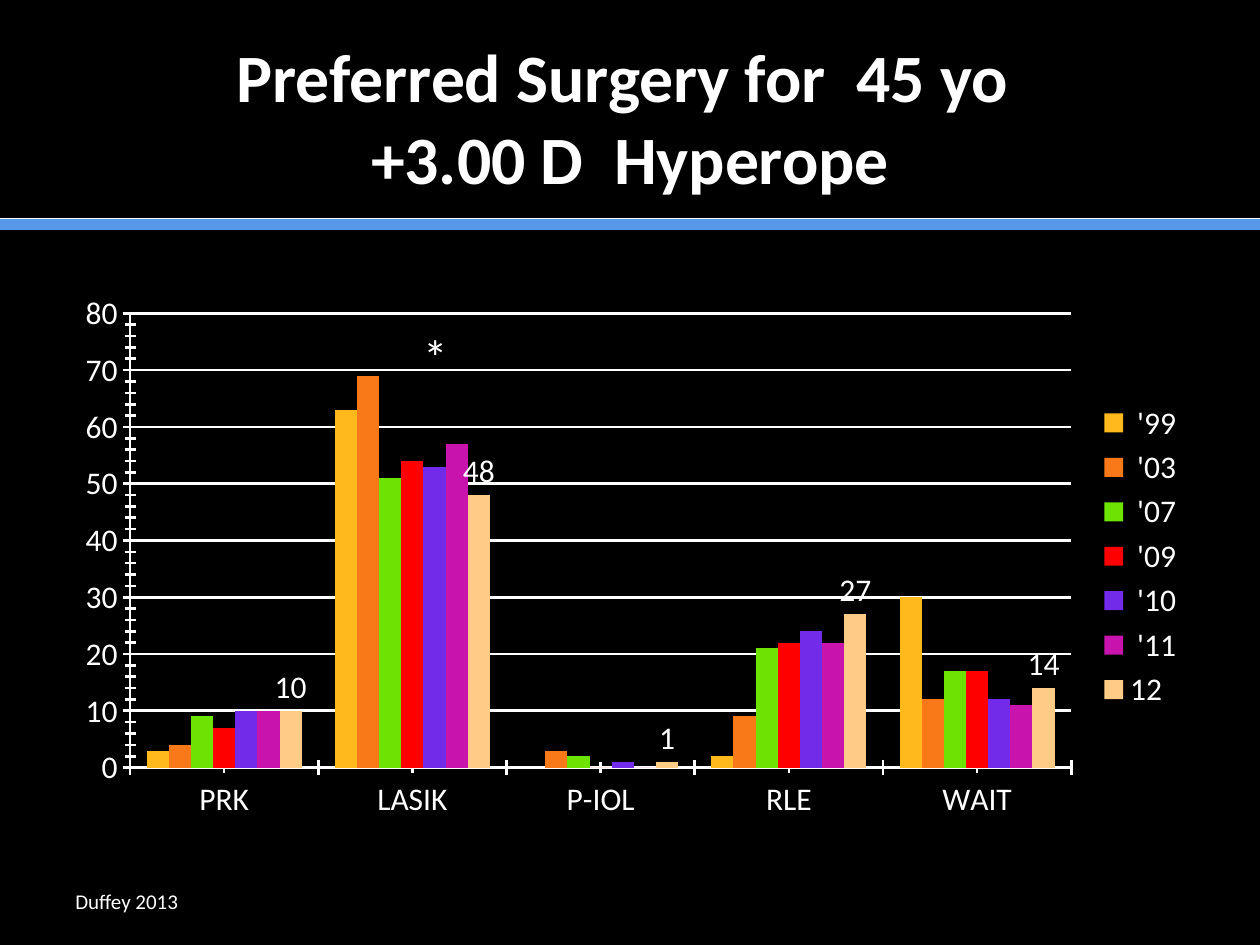
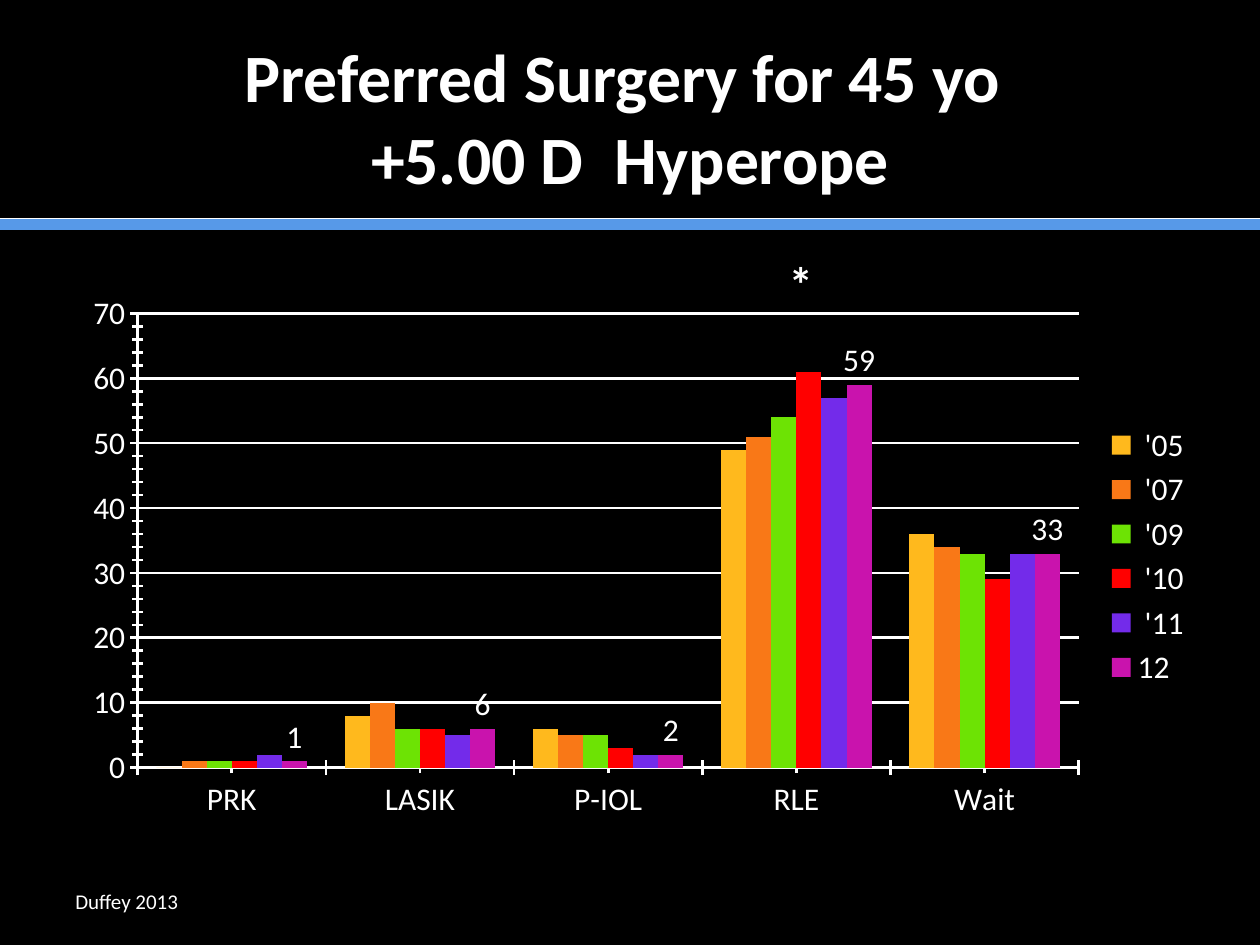
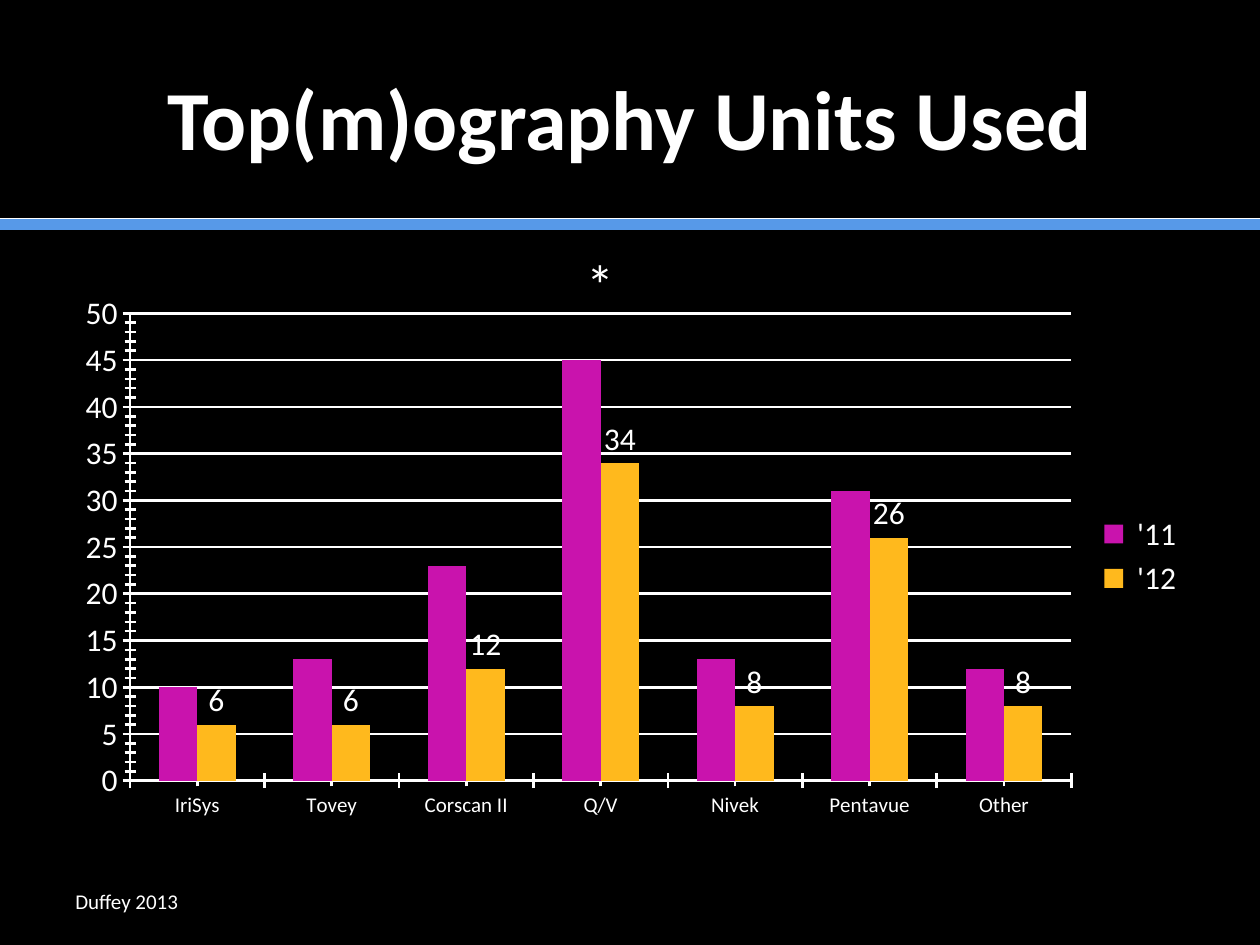
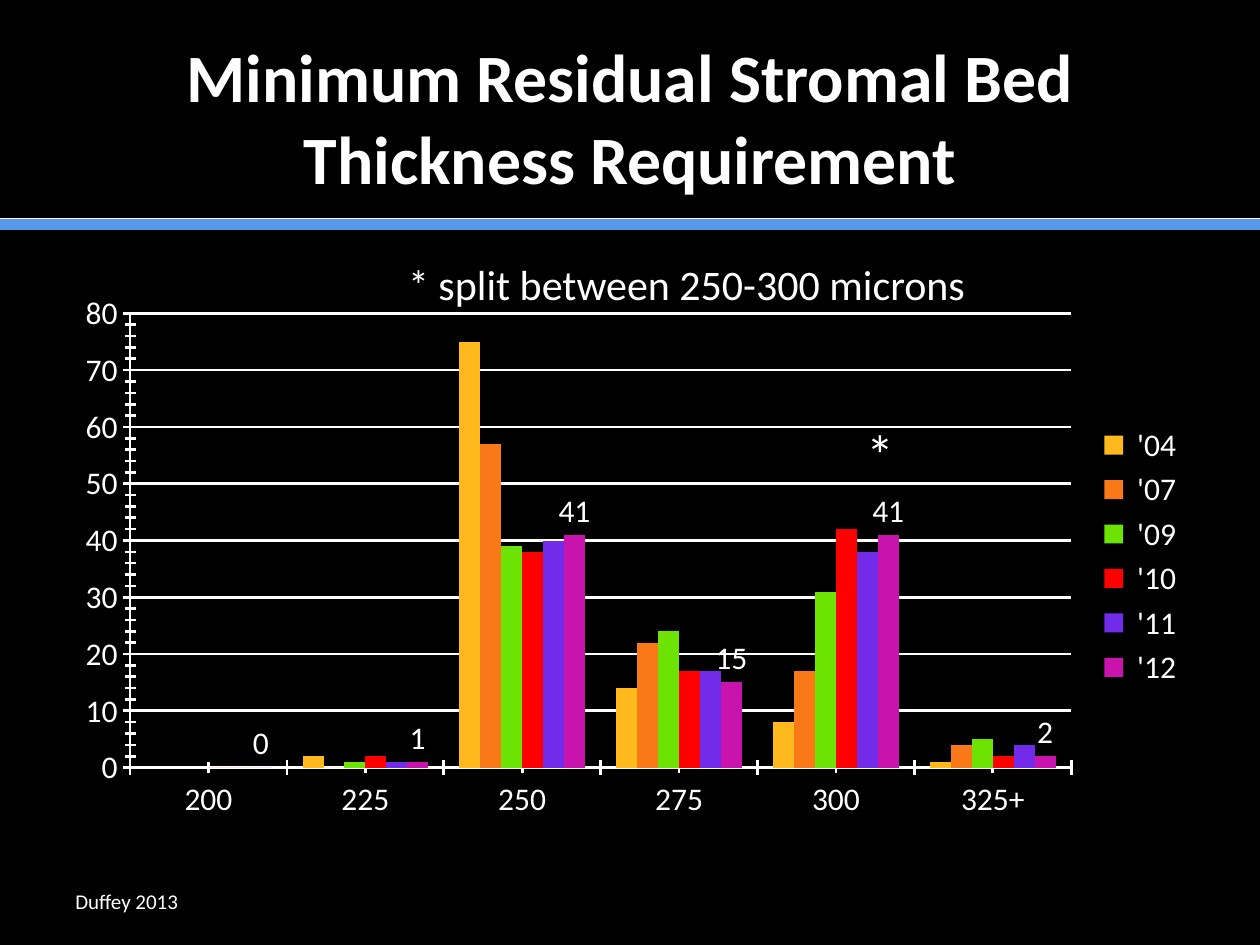
"""Builds four survey slides on refractive surgery, each with a clustered column chart."""
from lxml import etree
from pptx import Presentation
from pptx.chart.data import CategoryChartData
from pptx.dml.color import RGBColor
from pptx.enum.chart import XL_CHART_TYPE, XL_LABEL_POSITION, XL_LEGEND_POSITION, XL_TICK_MARK
from pptx.enum.shapes import MSO_CONNECTOR
from pptx.enum.text import MSO_ANCHOR, MSO_AUTO_SIZE, PP_ALIGN
from pptx.oxml.ns import qn
from pptx.util import Emu, Pt

CLUSTERED = XL_CHART_TYPE.COLUMN_CLUSTERED
OUTSIDE_END = XL_LABEL_POSITION.OUTSIDE_END
LEGEND_RIGHT = XL_LEGEND_POSITION.RIGHT
TICK_CROSS = XL_TICK_MARK.CROSS
STRAIGHT = MSO_CONNECTOR.STRAIGHT
MIDDLE = MSO_ANCHOR.MIDDLE
NO_AUTOFIT = MSO_AUTO_SIZE.NONE
CENTER = PP_ALIGN.CENTER

EMU_PER_PX = 9144
SLIDE_W, SLIDE_H = 1000, 750
FONT = "Calibri"
TITLE_SIZE = 38.7
COLORS = {
    "background": "000000",
    "text": "FFFFFF",
    "band": "5799E8",
    "amber": "FFB91D",
    "orange": "F97817",
    "green": "6DE304",
    "red": "FF0000",
    "violet": "732BEA",
    "magenta": "C913AD",
    "peach": "FFCC87",
}
YEAR_COLORS = ["amber", "orange", "green", "red", "violet", "magenta", "peach"]

SURVEYS = [
    {
        "title": ["Preferred Surgery for  45 yo ", "+3.00 D  Hyperope"],
        "categories": ["PRK", "LASIK", "P-IOL", "RLE", "WAIT"],
        "years": {
            " '99": [3, 63, None, 2, 30],
            " '03": [4, 69, 3, 9, 12],
            " '07": [9, 51, 2, 21, 17],
            " '09": [7, 54, 0, 22, 17],
            " '10": [10, 53, 1, 24, 12],
            " '11": [10, 57, 0, 22, 11],
            "12": [10, 48, 1, 27, 14],
        },
        "top": 80,
        "marks": [("*", (326, 254, 41, 57), 28, False)],
    },
    {
        "title": ["Preferred Surgery for 45 yo ", "+5.00 D  Hyperope"],
        "categories": ["PRK", "LASIK", "P-IOL", "RLE", "Wait"],
        "years": {
            " '05": [0, 8, 6, 49, 36],
            " '07": [1, 10, 5, 51, 34],
            " '09": [1, 6, 5, 54, 33],
            " '10": [1, 6, 3, 61, 29],
            " '11": [2, 5, 2, 57, 33],
            "12": [1, 6, 2, 59, 33],
        },
        "chart_left": 56,
        "top": 70,
        "marks": [("*", (616, 196, 41, 57), 28, True)],
    },
    {
        "title": ["Top(m)ography Units Used"],
        "title_size": 48,
        "categories": ["IriSys", "Tovey", "Corscan II", "Q/V", "Nivek", "Pentavue", "Other"],
        "years": {
            " '11": [10, 13, 23, 45, 13, 31, 12],
            " '12": [6, 6, 12, 34, 8, 26, 8],
        },
        "colors": ["magenta", "amber"],
        "category_size": 12,
        "top": 50,
        "step": 5,
        "marks": [("*", (456, 193, 44, 64), 32, False)],
    },
    {
        "title": ["Minimum Residual Stromal Bed Thickness Requirement"],
        "categories": ["200", "225", "250", "275", "300", "325+"],
        "years": {
            " '04": [None, 2, 75, 14, 8, 1],
            " '07": [None, 0, 57, 22, 17, 4],
            " '09": [None, 1, 39, 24, 31, 5],
            " '10": [0, 2, 38, 17, 42, 2],
            " '11": [0, 1, 40, 17, 38, 4],
            " '12": [0, 1, 41, 15, 41, 2],
        },
        "top": 80,
        "marks": [
            ("*", (678, 328, 44, 64), 32, False),
            ("* split between 250-300 microns", (314, 200, 471, 50), 24, False),
        ],
    },
]


def px(*lengths):
    """Turn px lengths into EMU."""
    return [Emu(length * EMU_PER_PX) for length in lengths]


def rgb(name):
    """Look up a named colour."""
    return RGBColor.from_string(COLORS[name])


def style_font(font, size, bold=False):
    """Apply the shared face and text colour."""
    font.name = FONT
    font.size = Pt(size)
    font.bold = bold
    font.color.rgb = rgb("text")


def add_run(paragraph, text, size, bold=False):
    """Append one formatted run."""
    run = paragraph.add_run()
    run.text = text
    style_font(run.font, size, bold)


def add_band(slide):
    """Place the two rules below the title on the layout that all slides share."""
    layout_tree = slide.slide_layout.shapes.element
    rules = [(178, "band", 7), (173, "text", 0.5)]
    for number, (y, color, width) in enumerate(rules, start=101):
        rule = slide.shapes.add_connector(STRAIGHT, *px(0, y, SLIDE_W, y))
        rule.line.color.rgb = rgb(color)
        rule.line.width = Pt(width)
        etree.SubElement(rule.element.spPr, qn("a:effectLst"))
        rule.element.nvCxnSpPr.cNvPr.set("id", str(number))
        layout_tree.append(rule.element)


def add_title(slide, lines, size):
    """Fill the title placeholder, one run per line."""
    title = slide.shapes.title
    title.left, title.top, title.width, title.height = px(50, 30, 900, 125)
    frame = title.text_frame
    frame.auto_size = NO_AUTOFIT
    frame.vertical_anchor = MIDDLE
    paragraph = frame.paragraphs[0]
    paragraph.alignment = CENTER
    for index, line in enumerate(lines):
        if index:
            paragraph.add_line_break()
        add_run(paragraph, line, size, bold=True)


def add_text(slide, text, box, size, bold=False, wrap=False):
    """Add a one-line text box and return its frame."""
    frame = slide.shapes.add_textbox(*px(*box)).text_frame
    frame.word_wrap = wrap
    add_run(frame.paragraphs[0], text, size, bold)
    return frame


def add_source(slide):
    """Credit the survey at the foot of the slide."""
    frame = add_text(slide, "Duffey 2013", (50, 695, 317, 40), 12, wrap=True)
    frame.vertical_anchor = MIDDLE


def style_line(line):
    """Draw an axis or gridline in the text colour."""
    line.color.rgb = rgb("text")
    line.width = Pt(1.5)


def add_survey_chart(slide, survey):
    """Add the column chart, with values on its latest year."""
    data = CategoryChartData()
    data.categories = survey["categories"]
    for year, shares in survey["years"].items():
        data.add_series(year, shares)
    box = px(survey.get("chart_left", 50), 225, 900, 433)
    chart = slide.shapes.add_chart(CLUSTERED, *box, data).chart
    style_font(chart.font, 18)
    chart.has_title = False
    chart.has_legend = True
    chart.legend.position = LEGEND_RIGHT
    chart.legend.include_in_layout = False

    for axis in (chart.category_axis, chart.value_axis):
        axis.major_tick_mark = axis.minor_tick_mark = TICK_CROSS
        style_line(axis.format.line)
    style_font(chart.category_axis.tick_labels.font, survey.get("category_size", 18))
    scale = chart.value_axis
    scale.minimum_scale = 0
    scale.maximum_scale = survey["top"]
    scale.major_unit = survey.get("step", 10)
    scale.has_major_gridlines = True
    style_line(scale.major_gridlines.format.line)

    plot = chart.plots[0]
    plot.vary_by_categories = False
    plot.gap_width = 150
    for year, color in zip(plot.series, survey.get("colors", YEAR_COLORS)):
        year.invert_if_negative = False
        year.format.fill.solid()
        year.format.fill.fore_color.rgb = rgb(color)
    labels = plot.series[-1].data_labels
    labels.show_value = True
    labels.position = OUTSIDE_END
    style_font(labels.font, 18)


def main():
    """Build and save the deck."""
    deck = Presentation()
    deck.slide_width, deck.slide_height = px(SLIDE_W, SLIDE_H)
    backdrop = deck.slide_master.background.fill
    backdrop.solid()
    backdrop.fore_color.rgb = rgb("background")
    title_only = deck.slide_layouts.get_by_name("Title Only")

    for index, survey in enumerate(SURVEYS):
        slide = deck.slides.add_slide(title_only)
        if index == 0:
            add_band(slide)
        add_title(slide, survey["title"], survey.get("title_size", TITLE_SIZE))
        add_survey_chart(slide, survey)
        add_source(slide)
        for text, box, size, bold in survey["marks"]:
            add_text(slide, text, box, size, bold)
    deck.save("out.pptx")


if __name__ == "__main__":
    main()
